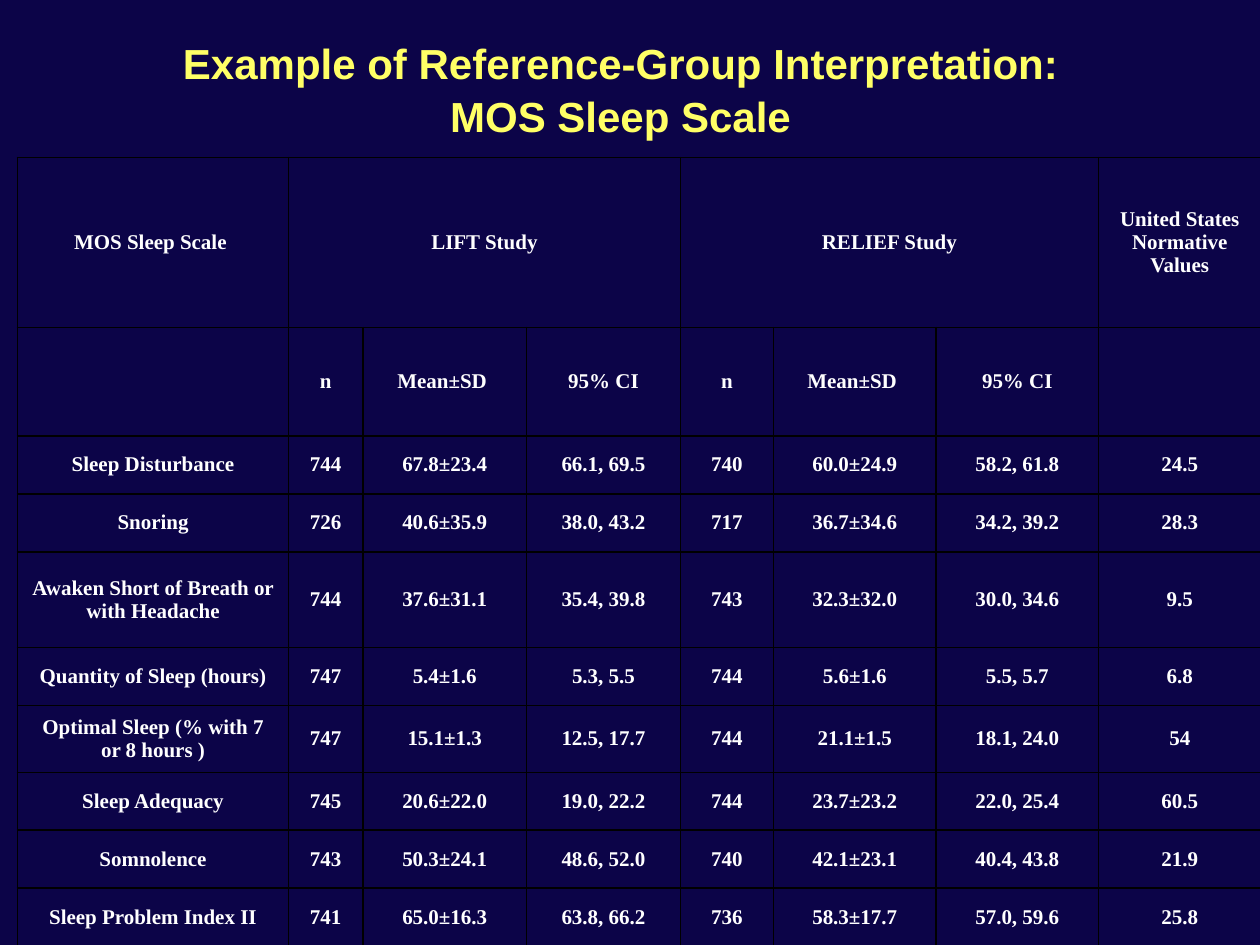
from pptx import Presentation
from pptx.dml.color import RGBColor as RGB
from pptx.enum.text import MSO_ANCHOR as Anchor, MSO_AUTO_SIZE as Auto, PP_ALIGN as Align
from pptx.oxml import parse_xml
from pptx.oxml.ns import nsdecls
from pptx.util import Inches, Pt


class Theme:
    back = RGB.from_string("0C0448")
    rule = "000000"
    rule_size = Pt(1)
    title = {"name": "Arial", "size": Pt(24), "bold": True,
             "color": RGB.from_string("FFFF66")}
    body = {"name": "Times New Roman", "size": Pt(12), "bold": True,
            "color": RGB.from_string("FFFFFF")}


WIDTHS = [2.15, 0.59, 1.3, 1.22, 0.74, 1.29, 1.29, 1.29]
HEIGHTS = [1.35, 0.86, 0.46, 0.46, 0.76, 0.46, 0.53, 0.46, 0.46, 0.46]
SPANS = [(0, 1, 3), (0, 4, 6)]
STUDY = ["n", "Mean±SD ", "95% CI"]
ROWS = [
    ["MOS Sleep Scale ", "LIFT Study", "", "", "RELIEF Study", "", "",
     "United States Normative\nValues"],
    ["", *STUDY, *STUDY, ""],
    ["Sleep Disturbance", "744", "67.8±23.4", "66.1, 69.5",
     "740", "60.0±24.9", "58.2, 61.8", "24.5"],
    ["Snoring", "726", "40.6±35.9", "38.0, 43.2",
     "717", "36.7±34.6", "34.2, 39.2", "28.3"],
    ["Awaken Short of Breath or with Headache", "744", "37.6±31.1", "35.4, 39.8",
     "743", "32.3±32.0", "30.0, 34.6", "9.5"],
    ["Quantity of Sleep (hours)", "747", "5.4±1.6", "5.3, 5.5",
     "744", "5.6±1.6", "5.5, 5.7", "6.8"],
    ["Optimal Sleep (% with 7 or 8 hours )", "747", "15.1±1.3", "12.5, 17.7",
     "744", "21.1±1.5", "18.1, 24.0", "54"],
    ["Sleep Adequacy", "745", "20.6±22.0", "19.0, 22.2",
     "744", "23.7±23.2", "22.0, 25.4", "60.5"],
    ["Somnolence", "743", "50.3±24.1", "48.6, 52.0",
     "740", "42.1±23.1", "40.4, 43.8", "21.9"],
    ["Sleep Problem Index II", "741", "65.0±16.3", "63.8, 66.2",
     "736", "58.3±17.7", "57.0, 59.6", "25.8"],
]


class Deck:
    def __init__(self, theme):
        self.theme = theme
        self.show = Presentation()
        self.show.slide_width, self.show.slide_height = Inches(10), Inches(7.5)
        self.slide = self.show.slides.add_slide(self.show.slide_layouts[6])
        fill = self.slide.background.fill
        fill.solid()
        fill.fore_color.rgb = theme.back

    def label(self, frame, text, form):
        frame.text = text
        for para in frame.paragraphs:
            para.alignment = Align.CENTER
            for key, value in form.items():
                if key == "color":
                    para.font.color.rgb = value
                else:
                    setattr(para.font, key, value)

    def title(self, text, *box):
        frame = self.slide.shapes.add_textbox(*map(Inches, box)).text_frame
        self.label(frame, text, self.theme.title)
        frame.word_wrap = False
        frame.auto_size = Auto.SHAPE_TO_FIT_TEXT
        frame.vertical_anchor = Anchor.MIDDLE
        frame.paragraphs[0].line_spacing = 1.05

    def edge(self, cell):
        props = cell._tc.get_or_add_tcPr()
        for spot, side in enumerate(("lnL", "lnR", "lnT", "lnB")):
            props.insert(spot, parse_xml(
                f'<a:{side} {nsdecls("a")} w="{self.theme.rule_size}"><a:solidFill>'
                f'<a:srgbClr val="{self.theme.rule}"/></a:solidFill></a:{side}>'))

    def table(self, rows, widths, heights, spans, left, top):
        size = (left, top, sum(widths), sum(heights))
        grid = self.slide.shapes.add_table(
            len(rows), len(widths), *map(Inches, size)).table
        grid.first_row = grid.horz_banding = False
        for col, width in zip(grid.columns, widths):
            col.width = Inches(width)
        for row, height, texts in zip(grid.rows, heights, rows):
            row.height = Inches(height)
            for cell, text in zip(row.cells, texts):
                self.label(cell.text_frame, text, self.theme.body)
                cell.vertical_anchor = Anchor.MIDDLE
                cell.fill.background()
                self.edge(cell)
        for row, first, last in spans:
            grid.cell(row, first).merge(grid.cell(row, last))


def main():
    deck = Deck(Theme)
    deck.title("Example of Reference-Group Interpretation:\vMOS Sleep Scale",
               1.35, 0.25, 7.15, 0.9)
    deck.table(ROWS, WIDTHS, HEIGHTS, SPANS, 0.14, 1.25)
    deck.show.save("out.pptx")


if __name__ == "__main__":
    main()
